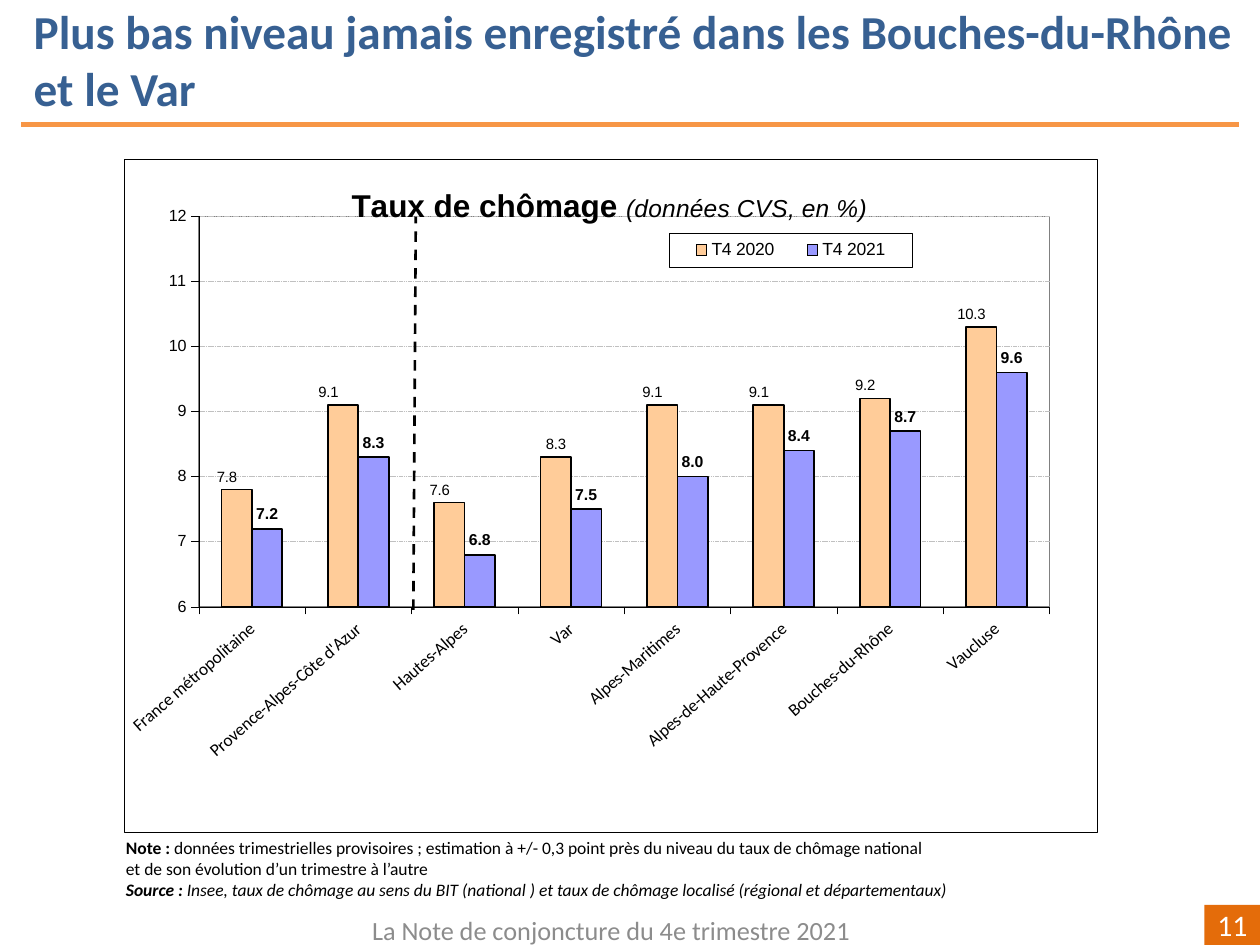
from lxml import etree
from pptx import Presentation
from pptx import oxml
from pptx import util as u
from pptx.chart import data as chart_data
from pptx.dml import color
from pptx.enum import chart as ch, dml, shapes, text

BLACK = color.RGBColor(0x00, 0x00, 0x00)
WHITE = color.RGBColor(0xFF, 0xFF, 0xFF)
NAVY = color.RGBColor(0x37, 0x60, 0x92)
ORANGE = color.RGBColor(0xF7, 0x96, 0x46)
RUST = color.RGBColor(0xE4, 0x6C, 0x0A)
GREY = color.RGBColor(0x8C, 0x8C, 0x8C)
SILVER = color.RGBColor(0xC0, 0xC0, 0xC0)
FRAME = color.RGBColor(0x80, 0x80, 0x80)
PEACH = color.RGBColor(0xFF, 0xCC, 0x99)
LILAC = color.RGBColor(0x99, 0x99, 0xFF)

NAMESPACES = ('xmlns:c="http://schemas.openxmlformats.org/drawingml/2006/chart" '
              'xmlns:a="http://schemas.openxmlformats.org/drawingml/2006/main"')
CATEGORIES = ["France métropolitaine", "Provence-Alpes-Côte d'Azur", "Hautes-Alpes", "Var",
              "Alpes-Maritimes", "Alpes-de-Haute-Provence", "Bouches-du-Rhône", "Vaucluse"]
RATES = {"T4 2020": [7.8, 9.1, 7.6, 8.3, 9.1, 9.1, 9.2, 10.3],
         "T4 2021": [7.2, 8.3, 6.8, 7.5, 8.0, 8.4, 8.7, 9.6]}
LABEL_SHIFTS = {0: -0.01, 1: -0.015, 2: -0.01, 4: -0.01, 5: -0.01, 6: -0.01, 7: -0.01}


def layout_xml(x, y, width=None, height=None, target=None, edge=True):
    parts = [("layoutTarget", target)]
    if edge:
        parts += [("xMode", "edge"), ("yMode", "edge")]
    parts += [("x", x), ("y", y), ("w", width), ("h", height)]
    body = "".join(f'<c:{tag} val="{value}"/>' for tag, value in parts if value is not None)
    return oxml.parse_xml(
        f"<c:layout {NAMESPACES}><c:manualLayout>{body}</c:manualLayout></c:layout>")


def surface_xml(fill, line=None, width=0.25):
    border = (f'<a:ln w="{u.Pt(width)}"><a:solidFill><a:srgbClr val="{line}"/>'
              '</a:solidFill></a:ln>') if line else ""
    return oxml.parse_xml(f'<c:spPr {NAMESPACES}><a:solidFill><a:srgbClr val="{fill}"/>'
                          f"</a:solidFill>{border}</c:spPr>")


class SlideBuilder:
    def __init__(self, page):
        self.page = page
        self.style = {"name": "Calibri", "size": 10, "bold": False, "italic": False,
                      "color": BLACK}

    def format_font(self, font, **changes):
        for key, value in {**self.style, **changes}.items():
            if key == "color":
                font.color.rgb = value
            else:
                setattr(font, key, u.Pt(value) if key == "size" else value)

    def format_line(self, line, tint, width, dash=None):
        line.color.rgb = tint
        line.width = u.Pt(width)
        if dash:
            line.dash_style = dash

    def fill_frame(self, frame, paragraphs, insets, align, anchor, **style):
        settings = {"word_wrap": True, "vertical_anchor": anchor}
        sides = ("margin_left", "margin_top", "margin_right", "margin_bottom")
        settings.update(zip(sides, map(u.Pt, insets)))
        for key, value in settings.items():
            setattr(frame, key, value)
        for index, runs in enumerate(paragraphs):
            para = frame.add_paragraph() if index else frame.paragraphs[0]
            para.alignment = align
            for words, changes in runs:
                span = para.add_run()
                span.text = words
                self.format_font(span.font, **{**style, **changes})

    def text(self, bounds, paragraphs, insets=(7.2, 3.6, 7.2, 3.6),
             align=text.PP_ALIGN.LEFT, anchor=text.MSO_ANCHOR.TOP, **style):
        box = self.page.shapes.add_textbox(*map(u.Pt, bounds))
        self.fill_frame(box.text_frame, paragraphs, insets, align, anchor, **style)

    def badge(self, bounds, words, fill, **style):
        box = self.page.shapes.add_shape(shapes.MSO_SHAPE.RECTANGLE, *map(u.Pt, bounds))
        box.shadow.inherit = False
        box.fill.solid()
        box.fill.fore_color.rgb = fill
        box.line.fill.background()
        self.fill_frame(box.text_frame, [[(words, {})]], (7.2, 3.6, 7.2, 3.6),
                        text.PP_ALIGN.RIGHT, text.MSO_ANCHOR.MIDDLE, **style)

    def line(self, points, tint, width, dash=None):
        rule = self.page.shapes.add_connector(shapes.MSO_CONNECTOR.STRAIGHT,
                                              *map(u.Pt, points))
        self.format_line(rule.line, tint, width, dash)
        etree.SubElement(rule._element.spPr, oxml.ns.qn("a:effectLst"))

    def column_chart(self, bounds, categories, rates, colors):
        data = chart_data.CategoryChartData(number_format="0.0")
        data.categories = categories
        for name, values in rates.items():
            data.add_series(name, values)
        chart = self.page.shapes.add_chart(ch.XL_CHART_TYPE.COLUMN_CLUSTERED,
                                           *map(u.Pt, bounds), data).chart
        self.format_font(chart.font, name="Arial", size=8.5)
        plot = chart.plots[0]
        for key, value in {"gap_width": 150, "overlap": 0, "vary_by_categories": False}.items():
            setattr(plot, key, value)
        for series, fill, bold in zip(plot.series, colors, (False, True)):
            series.format.fill.solid()
            series.format.fill.fore_color.rgb = fill
            self.format_line(series.format.line, BLACK, 1)
            labels = series.data_labels
            for key, value in {"show_value": True, "number_format": "0.0",
                               "number_format_is_linked": False,
                               "position": ch.XL_LABEL_POSITION.OUTSIDE_END}.items():
                setattr(labels, key, value)
            self.format_font(labels.font, name="Arial", size=9 if bold else 8.5, bold=bold)
        self.axes(chart)
        self.title(chart)
        self.legend(chart)
        area = chart._chartSpace.chart.plotArea
        for old in area.findall(oxml.ns.qn("c:layout")):
            area.remove(old)
        area.insert(0, layout_xml(0.077, 0.085, 0.874, 0.58, "inner"))
        area.append(surface_xml(WHITE, FRAME, 0.5))
        chart._chartSpace.chart.addnext(surface_xml(WHITE, BLACK))
        return plot.series

    def axes(self, chart):
        for axis, name, size in ((chart.category_axis, "Calibri", 10),
                                 (chart.value_axis, "Arial", 9.2)):
            axis.major_tick_mark = ch.XL_TICK_MARK.OUTSIDE
            self.format_font(axis.tick_labels.font, name=name, size=size)
            self.format_line(axis.format.line, BLACK, 0.25)
        body = chart.category_axis._element.find(".//" + oxml.ns.qn("a:bodyPr"))
        body.set("rot", "-2460000")
        body.set("vert", "horz")
        scale = chart.value_axis
        for key, value in {"minimum_scale": 6, "maximum_scale": 12, "major_unit": 1}.items():
            setattr(scale, key, value)
        scale.tick_labels.number_format = "0"
        scale.tick_labels.number_format_is_linked = False
        self.format_line(scale.major_gridlines.format.line, SILVER, 0.25,
                         dml.MSO_LINE.SQUARE_DOT)

    def title(self, chart):
        title = chart.chart_title
        para = title.text_frame.paragraphs[0]
        for words, changes in (("Taux de chômage ", {"size": 18, "bold": True}),
                               ("(données CVS, en %)", {"size": 14, "italic": True})):
            span = para.add_run()
            span.text = words
            self.format_font(span.font, name="Arial", **changes)
        element = title._element
        for old in element.findall(oxml.ns.qn("c:layout")):
            element.remove(old)
        element.find(oxml.ns.qn("c:tx")).addnext(layout_xml(0.23, 0.035))
        element.find(oxml.ns.qn("c:overlay")).set("val", "1")

    def legend(self, chart):
        chart.has_legend = True
        legend = chart.legend
        legend.position = ch.XL_LEGEND_POSITION.RIGHT
        legend.include_in_layout = False
        self.format_font(legend.font, name="Arial")
        element = legend._element
        for old in element.findall(oxml.ns.qn("c:layout")):
            element.remove(old)
        element.find(oxml.ns.qn("c:legendPos")).addnext(layout_xml(0.56, 0.11, 0.25, 0.05))
        element.find(oxml.ns.qn("c:overlay")).addnext(surface_xml(WHITE, BLACK))

    def point_label(self, series, index, extra, **style):
        label = series.points[index].data_label
        self.format_font(label.font, name="Arial", **style)
        label.position = ch.XL_LABEL_POSITION.OUTSIDE_END
        mark = series._element.xpath(f"c:dLbls/c:dLbl/c:idx[@val='{index}']")[0]
        mark.addnext(extra)


def main():
    deck = Presentation()
    deck.slide_width, deck.slide_height = u.Pt(720), u.Pt(540)
    builder = SlideBuilder(deck.slides.add_slide(deck.slide_layouts[6]))
    headline = "Plus bas niveau jamais enregistré dans les Bouches-du-Rhône et le Var"
    builder.text((12.2, -2.2, 713.5, 72.7), [[(headline, {})]],
                 size=27, bold=True, color=NAVY)
    builder.line((12.2, 71.3, 707.8, 71.3), ORANGE, 3)
    builder.badge((688.3, 517, 31.7, 23), "11", RUST, size=17, color=WHITE)
    builder.text((173.5, 517, 351.4, 28.8), [[("La Note de conjoncture du 4e trimestre 2021", {})]],
                 align=text.PP_ALIGN.CENTER, anchor=text.MSO_ANCHOR.MIDDLE, size=15, color=GREY)
    builder.text((70.6, 476, 491.8, 38.2), [
        [("Note : ", {"bold": True}),
         ("données trimestrielles provisoires ; estimation à +/- 0,3 point près du niveau "
          "du taux de chômage national", {})],
        [("et de son évolution d’un trimestre à l’autre", {})],
        [("Source : ", {"bold": True, "italic": True}),
         ("Insee, taux de chômage au sens du BIT (national ) et taux de chômage localisé "
          "(régional et départementaux)", {"italic": True})],
    ], insets=(1.4, 2.2, 0, 0))
    previous, current = builder.column_chart((70.6, 90.7, 556.6, 385.2), CATEGORIES, RATES,
                                             (PEACH, LILAC))
    for index, shift in LABEL_SHIFTS.items():
        builder.point_label(previous, index, layout_xml(shift, 0, edge=False), size=8.5)
    for index in (0, 1):
        builder.point_label(current, index, surface_xml("FFFF00"), size=9, bold=True)
    builder.line((236.2, 348.5, 237.6, 123.8), BLACK, 1.5, dml.MSO_LINE.DASH)
    deck.save("out.pptx")


if __name__ == "__main__":
    main()
